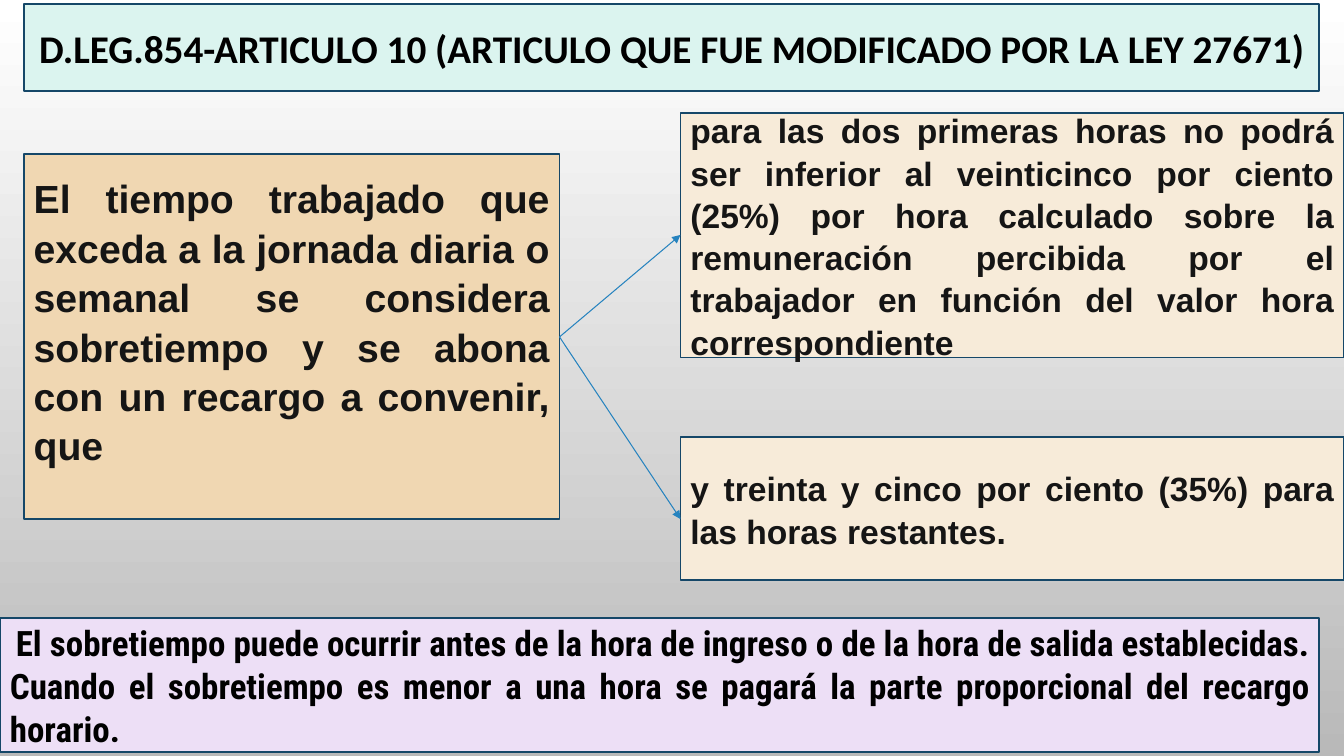
from dataclasses import dataclass

from pptx import Presentation
from pptx.dml.color import RGBColor
from pptx.enum.shapes import MSO_CONNECTOR, MSO_SHAPE
from pptx.enum.text import MSO_ANCHOR, PP_ALIGN
from pptx.oxml.ns import qn
from pptx.oxml.xmlchemy import OxmlElement
from pptx.slide import Slide
from pptx.util import Cm, Pt

RECTANGLE = MSO_SHAPE.RECTANGLE
STRAIGHT = MSO_CONNECTOR.STRAIGHT
MIDDLE = MSO_ANCHOR.MIDDLE
CENTER, JUSTIFY = PP_ALIGN.CENTER, PP_ALIGN.JUSTIFY


@dataclass(frozen=True)
class Theme:
    page_top: str = "FFFFFF"
    page_bottom: str = "B9B9B9"
    mint: str = "DBF4EF"
    sand: str = "F0D7B2"
    cream: str = "F7EBD9"
    lilac: str = "EDDFF6"
    border: str = "154768"
    arrow: str = "2683BF"
    black: str = "000000"
    ink: str = "151515"
    heading_size: float = 28
    note_size: float = 25
    body_size: float = 24
    space_size: float = 18
    border_width: float = 1.25
    arrow_width: float = 0.75


THEME = Theme()


@dataclass(frozen=True)
class Span:
    text: str
    size: float
    font: str = "Arial"
    color: str = THEME.ink
    bold: bool = True


@dataclass(frozen=True)
class Panel:
    left: float
    top: float
    width: float
    height: float
    fill: str
    spans: tuple[Span, ...]
    align: PP_ALIGN = JUSTIFY
    line_spacing: float = 1.05
    bottom_inset: float = 0.13


@dataclass(frozen=True)
class Arrow:
    start: tuple[float, float]
    end: tuple[float, float]


# Shared edges, in centimetres
PAGE_WIDTH, PAGE_HEIGHT = 33.87, 19.05
MARGIN = 0.6
RULE_RIGHT = 14.1
RATE_LEFT = 17.15
RATE_WIDTH = PAGE_WIDTH - RATE_LEFT
FORK = (RULE_RIGHT, 8.49)

PANELS = (
    Panel(MARGIN, 0.1, 32.65, 2.2, THEME.mint, (
        Span("D.LEG.854-ARTICULO 10 (ARTICULO QUE FUE MODIFICADO POR LA LEY 27671)",
             THEME.heading_size, "Calibri", THEME.black),
    ), CENTER, 1.0),
    Panel(MARGIN, 3.89, RULE_RIGHT - MARGIN, 9.19, THEME.sand, (
        Span("El tiempo trabajado que exceda a la jornada diaria o semanal se considera "
             "sobretiempo y se abona con un recargo a convenir, que", THEME.heading_size),
    ), bottom_inset=0.94),
    Panel(0, 15.57, 33.25, 3.38, THEME.lilac, (
        Span(" ", THEME.space_size, "Roboto Condensed", bold=False),
        Span("El sobretiempo puede ocurrir antes de la hora de ingreso o de la hora de salida "
             "establecidas. Cuando el sobretiempo es menor a una hora se pagará la parte "
             "proporcional del recargo horario.",
             THEME.note_size, "Roboto Condensed", THEME.black),
    ), line_spacing=1.02),
    Panel(RATE_LEFT, 2.84, RATE_WIDTH, 6.17, THEME.cream, (
        Span("para las dos primeras horas no podrá ser inferior al veinticinco por ciento "
             "(25%) por hora calculado sobre la remuneración percibida por el trabajador "
             "en función del valor hora correspondiente", THEME.body_size),
    )),
    Panel(RATE_LEFT, 11.02, RATE_WIDTH, 3.6, THEME.cream, (
        Span("y treinta y cinco por ciento (35%) para las horas restantes.",
             THEME.body_size),
    )),
)

ARROWS = (
    Arrow(FORK, (RATE_LEFT, 5.92)),
    Arrow(FORK, (RATE_LEFT, 13.08)),
)


def rgb(value: str) -> RGBColor:
    return RGBColor.from_string(value)


def paint_background(page: Slide) -> None:
    fill = page.background.fill
    fill.gradient()
    fill.gradient_angle = 270
    for stop, color in zip(fill.gradient_stops, (THEME.page_top, THEME.page_bottom)):
        stop.color.rgb = rgb(color)


def draw_panel(page: Slide, panel: Panel) -> None:
    box = page.shapes.add_shape(RECTANGLE, Cm(panel.left), Cm(panel.top),
                                Cm(panel.width), Cm(panel.height))
    box.shadow.inherit = False
    box.fill.solid()
    box.fill.fore_color.rgb = rgb(panel.fill)
    box.line.color.rgb = rgb(THEME.border)
    box.line.width = Pt(THEME.border_width)

    frame = box.text_frame
    frame.word_wrap = True
    frame.vertical_anchor = MIDDLE
    frame.margin_bottom = Cm(panel.bottom_inset)
    para = frame.paragraphs[0]
    para.alignment = panel.align
    para.line_spacing = panel.line_spacing
    for span in panel.spans:
        run = para.add_run()
        run.text = span.text
        run.font.name = span.font
        run.font.size = Pt(span.size)
        run.font.bold = span.bold
        run.font.color.rgb = rgb(span.color)


def draw_arrow(page: Slide, arrow: Arrow) -> None:
    connector = page.shapes.add_connector(
        STRAIGHT, *(Cm(value) for value in arrow.start + arrow.end))
    connector.line.color.rgb = rgb(THEME.arrow)
    connector.line.width = Pt(THEME.arrow_width)

    # Arrowhead and no shadow
    properties = connector.element.spPr
    head = OxmlElement("a:tailEnd")
    head.set("type", "triangle")
    properties.find(qn("a:ln")).append(head)
    properties.append(OxmlElement("a:effectLst"))


def main() -> None:
    deck = Presentation()
    deck.slide_width, deck.slide_height = Cm(PAGE_WIDTH), Cm(PAGE_HEIGHT)
    page = deck.slides.add_slide(deck.slide_layouts[6])
    paint_background(page)
    for panel in PANELS:
        draw_panel(page, panel)
    for arrow in ARROWS:
        draw_arrow(page, arrow)
    deck.save("out.pptx")


if __name__ == "__main__":
    main()
